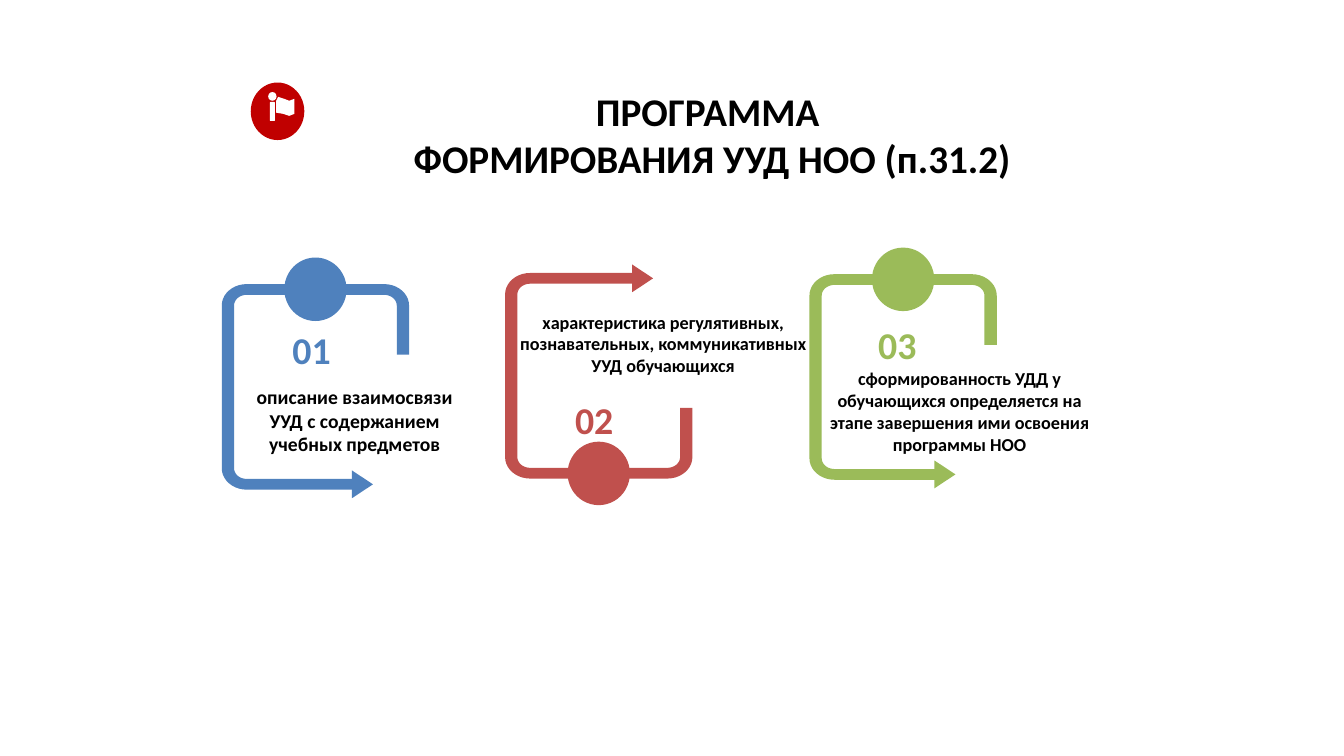
from dataclasses import dataclass
from math import cos, radians, sin

from pptx import Presentation
from pptx import util as u
from pptx.dml.color import RGBColor
from pptx.enum import shapes, text
from pptx.shapes.autoshape import Shape
from pptx.slide import Slide
from pptx.text.text import TextFrame

Point = tuple[float, float]


@dataclass(frozen=True)
class Theme:
    font: str = "Calibri"
    ink: str = "000000"
    white: str = "FFFFFF"
    badge: str = "C00000"
    blue: str = "4F81BD"
    red: str = "C0504D"
    green: str = "9BBB59"
    title_size: int = 28
    number_size: int = 27
    inset: float = 0.25


@dataclass(frozen=True)
class Box:
    left: float
    top: float
    width: float
    height: float

    def lengths(self) -> tuple[u.Cm, u.Cm, u.Cm, u.Cm]:
        return u.Cm(self.left), u.Cm(self.top), u.Cm(self.width), u.Cm(self.height)


@dataclass(frozen=True)
class Bracket:
    width: float = 4.72
    height: float = 5.18
    bar_x: float = 0.31
    bar_y: float = 0.27
    radius_x: float = 0.63
    radius_y: float = 0.54
    leg_end: float = 1.78
    bar_end: float = 3.28
    disc_x: float = 2.36
    disc_y: float = 0.13
    disc_size: float = 1.32
    ring_width: float = 1.57
    ring_height: float = 1.6
    arrow_length: float = 0.53
    arrow_width: float = 0.7


@dataclass(frozen=True)
class Step:
    number: str
    caption: str
    color: str
    left: float
    top: float
    arrow_x: float
    number_box: Box
    caption_box: Box
    caption_size: int
    flipped: bool = False


THEME = Theme()
BRACKET = Bracket()

STEPS = [
    Step("01", "описание взаимосвязи УУД с содержанием учебных предметов",
         THEME.blue, 5.59, 7.16, 3.28,
         Box(5.99, 7.98, 3.73, 1.07), Box(5.84, 10.21, 6.2, 0.76), 14),
    Step("02", "характеристика регулятивных, познавательных, коммуникативных УУД обучающихся",
         THEME.red, 12.73, 6.88, 3.2,
         Box(13.11, 9.75, 3.73, 1.07), Box(12.85, 8.28, 7.72, 0.76), 13, True),
    Step("03", "сформированность УДД у обучающихся определяется на этапе завершения "
         "ими освоения программы НОО",
         THEME.green, 20.4, 6.91, 3.15,
         Box(20.75, 7.85, 3.73, 1.07), Box(20.55, 9.98, 7.26, 0.76), 13),
]

FLAG = [(7.01, 2.44), (6.96, 2.54), (6.96, 2.84), (7.14, 2.87), (7.29, 2.92),
        (7.42, 2.87), (7.42, 2.49), (7.29, 2.54), (7.16, 2.49)]


def paint(shape: Shape, color: str) -> None:
    shape.shadow.inherit = False
    shape.fill.solid()
    shape.fill.fore_color.rgb = RGBColor.from_string(color)
    shape.line.fill.background()


def add_preset(page: Slide, kind: shapes.MSO_SHAPE, box: Box, color: str) -> Shape:
    shape = page.shapes.add_shape(kind, *box.lengths())
    paint(shape, color)
    return shape


def add_outline(page: Slide, points: list[Point], color: str) -> None:
    corners = [(u.Cm(x), u.Cm(y)) for x, y in points]
    builder = page.shapes.build_freeform(*corners[0], scale=1.0)
    builder.add_line_segments(corners[1:], close=True)
    paint(builder.convert_to_shape(), color)


def write(frame: TextFrame, words: str, size: int, color: str,
          anchor: text.MSO_ANCHOR = text.MSO_ANCHOR.TOP) -> None:
    frame.text = words
    frame.word_wrap = True
    frame.auto_size = text.MSO_AUTO_SIZE.NONE
    frame.vertical_anchor = anchor
    frame.margin_left = frame.margin_right = u.Cm(THEME.inset)
    frame.margin_top = frame.margin_bottom = u.Cm(THEME.inset)
    for para in frame.paragraphs:
        para.alignment = text.PP_ALIGN.CENTER
        for span in para.runs:
            span.font.name = THEME.font
            span.font.size = u.Pt(size)
            span.font.bold = True
            span.font.color.rgb = RGBColor.from_string(color)


def arc(center: Point, radii: Point, start: int, end: int, pieces: int = 10) -> list[Point]:
    angles = [radians(start + (end - start) * i / pieces) for i in range(pieces + 1)]
    return [(center[0] + radii[0] * cos(a), center[1] + radii[1] * sin(a)) for a in angles]


def bracket_points() -> list[Point]:
    b = BRACKET
    outer = (b.radius_x, b.radius_y)
    inner = (b.radius_x - b.bar_x, b.radius_y - b.bar_y)
    top_left = (b.radius_x, b.radius_y)
    bottom_left = (b.radius_x, b.height - b.radius_y)
    top_right = (b.width - b.radius_x, b.radius_y)
    return [
        *arc(top_left, outer, 270, 180),
        *arc(bottom_left, outer, 180, 90),
        (b.bar_end, b.height), (b.bar_end, b.height - b.bar_y),
        *arc(bottom_left, inner, 90, 180),
        *arc(top_left, inner, 180, 270),
        *arc(top_right, inner, 270, 360),
        (b.width - b.bar_x, b.leg_end), (b.width, b.leg_end),
        *arc(top_right, outer, 360, 270),
    ]


def add_step(page: Slide, step: Step) -> None:
    b = BRACKET

    def place(point: Point) -> Point:
        x, y = point
        return step.left + x, step.top + (b.height - y if step.flipped else y)

    def centered(width: float, height: float) -> Box:
        x, y = place((b.disc_x, b.disc_y))
        return Box(x - width / 2, y - height / 2, width, height)

    axis = b.height - b.bar_y / 2
    arrow = [(step.arrow_x, axis - b.arrow_width / 2),
             (step.arrow_x, axis + b.arrow_width / 2),
             (step.arrow_x + b.arrow_length, axis)]
    add_preset(page, shapes.MSO_SHAPE.OVAL, centered(b.disc_size, b.disc_size), step.color)
    for points in (bracket_points(), arrow):
        add_outline(page, [place(point) for point in points], step.color)
    ring = add_preset(page, shapes.MSO_SHAPE.DONUT,
                      centered(b.ring_width, b.ring_height), step.color)
    ring.adjustments[0] = 0.17

    number = page.shapes.add_textbox(*step.number_box.lengths())
    write(number.text_frame, step.number, THEME.number_size, step.color)
    caption = page.shapes.add_textbox(*step.caption_box.lengths())
    write(caption.text_frame, step.caption, step.caption_size, THEME.ink,
          text.MSO_ANCHOR.MIDDLE)


def add_badge(page: Slide) -> None:
    add_preset(page, shapes.MSO_SHAPE.OVAL, Box(6.32, 2.08, 1.35, 1.45), THEME.badge)
    add_preset(page, shapes.MSO_SHAPE.OVAL, Box(6.76, 2.32, 0.21, 0.22), THEME.white)
    add_preset(page, shapes.MSO_SHAPE.ROUNDED_RECTANGLE, Box(6.8, 2.57, 0.13, 0.48), THEME.white)
    add_outline(page, FLAG, THEME.white)


def main() -> None:
    deck = Presentation()
    deck.slide_width, deck.slide_height = u.Cm(33.87), u.Cm(19.05)
    page = deck.slides.add_slide(deck.slide_layouts[5])
    title = page.shapes.title
    title.left, title.top, title.width, title.height = Box(6.91, 1.96, 22.07, 1.57).lengths()
    write(title.text_frame, "ПРОГРАММА \nФОРМИРОВАНИЯ УУД НОО (п.31.2)",
          THEME.title_size, THEME.ink)
    for step in STEPS:
        add_step(page, step)
    add_badge(page)
    deck.save("out.pptx")


if __name__ == "__main__":
    main()
